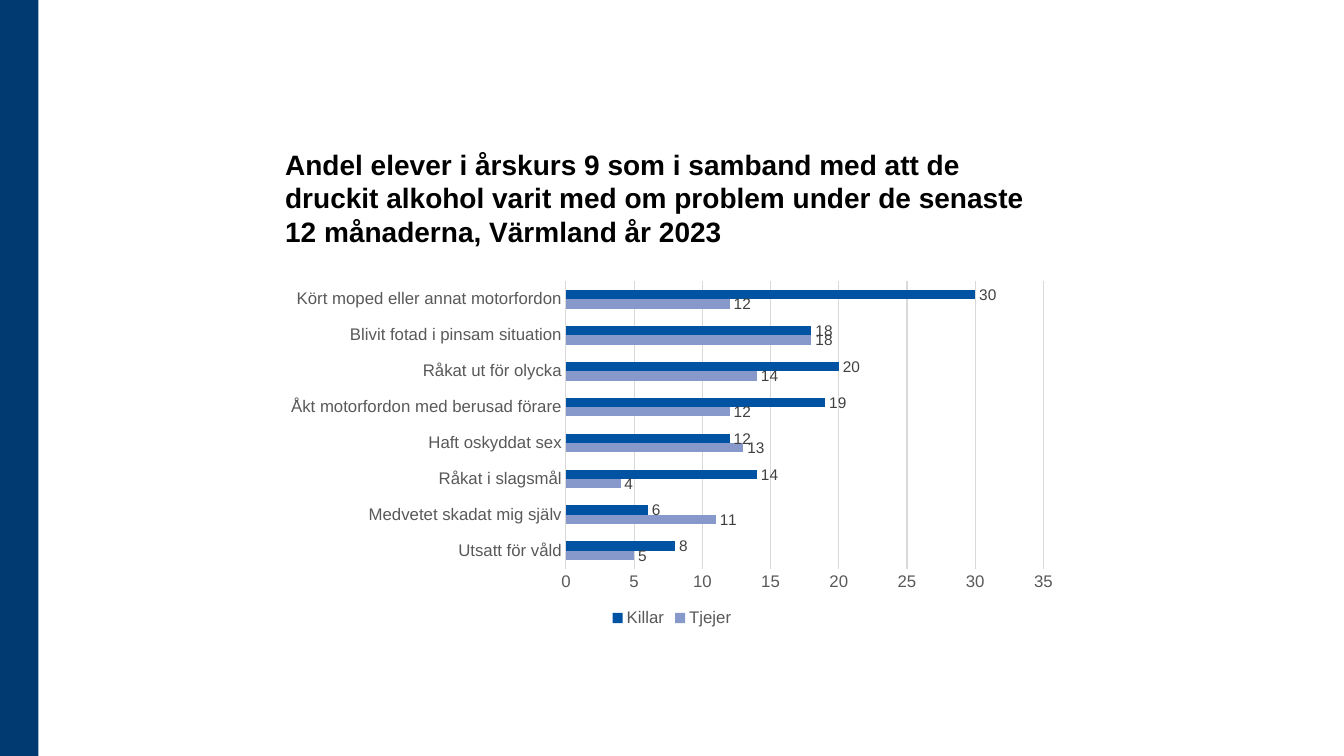
from pptx import Presentation
from pptx.chart.data import CategoryChartData
from pptx.dml.color import RGBColor
from pptx.enum.chart import XL_CHART_TYPE, XL_LABEL_POSITION, XL_LEGEND_POSITION, XL_TICK_MARK
from pptx.enum.shapes import MSO_SHAPE
from pptx.enum.text import MSO_ANCHOR
from pptx.util import Inches, Pt

BAR_CLUSTERED = XL_CHART_TYPE.BAR_CLUSTERED
OUTSIDE_END = XL_LABEL_POSITION.OUTSIDE_END
LEGEND_BOTTOM = XL_LEGEND_POSITION.BOTTOM
NO_TICK = XL_TICK_MARK.NONE
RECTANGLE = MSO_SHAPE.RECTANGLE
ANCHOR_BOTTOM = MSO_ANCHOR.BOTTOM

WIDTH, HEIGHT = Inches(13.33), Inches(7.5)
CONTENT_LEFT, CONTENT_WIDTH = Inches(2.73), Inches(7.87)
FONT = "Arial"
COLORS = {
    "band": "003A70",
    "title": "000000",
    "axis": "595959",
    "label": "404040",
    "grid": "D9D9D9",
    "Tjejer": "8799CB",
    "Killar": "0053A3",
}

TITLE = ("Andel elever i årskurs 9 som i samband med att de druckit alkohol "
         "varit med om problem under de senaste 12 månaderna, Värmland år 2023")
# Category: (Tjejer, Killar), from the bottom bar pair upwards
SHARES = {
    "Utsatt för våld": (5, 8),
    "Medvetet skadat mig själv": (11, 6),
    "Råkat i slagsmål": (4, 14),
    "Haft oskyddat sex": (13, 12),
    "Åkt motorfordon med berusad förare": (12, 19),
    "Råkat ut för olycka": (14, 20),
    "Blivit fotad i pinsam situation": (18, 18),
    "Kört moped eller annat motorfordon": (12, 30),
}


def rgb(name):
    return RGBColor.from_string(COLORS[name])


def style_font(font, size, color, bold=False):
    font.name = FONT
    font.size = Pt(size)
    font.bold = bold
    font.color.rgb = rgb(color)


def add_text(slide, text, left, top, width, height, *, size, color, bold=False, anchor=None):
    tf = slide.shapes.add_textbox(left, top, width, height).text_frame
    tf.word_wrap = True
    tf.vertical_anchor = anchor
    r = tf.paragraphs[0].add_run()
    r.text = text
    style_font(r.font, size, color, bold)


def add_band(slide):
    sp = slide.shapes.add_shape(RECTANGLE, 0, 0, Inches(0.38), HEIGHT)
    sp.shadow.inherit = False
    sp.fill.solid()
    sp.fill.fore_color.rgb = rgb("band")
    sp.line.fill.background()


def style_axis(axis):
    axis.major_tick_mark = axis.minor_tick_mark = NO_TICK
    style_font(axis.tick_labels.font, 12, "axis")


def style_line(line):
    line.color.rgb = rgb("grid")
    line.width = Pt(0.75)


def style_series(series):
    series.format.fill.solid()
    series.format.fill.fore_color.rgb = rgb(series.name)
    series.invert_if_negative = False
    labels = series.data_labels
    labels.show_value = True
    labels.position = OUTSIDE_END
    labels.number_format, labels.number_format_is_linked = "0", False
    style_font(labels.font, 11, "label")


def add_bar_chart(slide, left, top, width, height):
    data = CategoryChartData(number_format="0")
    data.categories = list(SHARES)
    for name, values in zip(("Tjejer", "Killar"), zip(*SHARES.values())):
        data.add_series(name, values)
    chart = slide.shapes.add_chart(BAR_CLUSTERED, left, top, width, height, data).chart
    chart.has_title = False
    style_font(chart.font, 12, "title")

    plot = chart.plots[0]
    plot.gap_width = 182
    plot.overlap = 0
    plot.vary_by_categories = False
    for series in plot.series:
        style_series(series)

    style_axis(chart.category_axis)
    style_line(chart.category_axis.format.line)
    value_axis = chart.value_axis
    style_axis(value_axis)
    value_axis.minimum_scale, value_axis.maximum_scale = 0, 35
    value_axis.major_unit = 5
    value_axis.format.line.fill.background()
    style_line(value_axis.major_gridlines.format.line)

    chart.has_legend = True
    chart.legend.position = LEGEND_BOTTOM
    chart.legend.include_in_layout = False
    style_font(chart.legend.font, 12, "axis")


def main():
    prs = Presentation()
    prs.slide_width, prs.slide_height = WIDTH, HEIGHT
    slide = prs.slides.add_slide(prs.slide_layouts[6])
    add_band(slide)
    add_text(slide, TITLE, CONTENT_LEFT, Inches(1.06), CONTENT_WIDTH, Inches(1.45),
             size=20, color="title", bold=True, anchor=ANCHOR_BOTTOM)
    add_bar_chart(slide, CONTENT_LEFT, Inches(2.72), CONTENT_WIDTH, Inches(3.54))
    prs.save("out.pptx")


if __name__ == "__main__":
    main()
